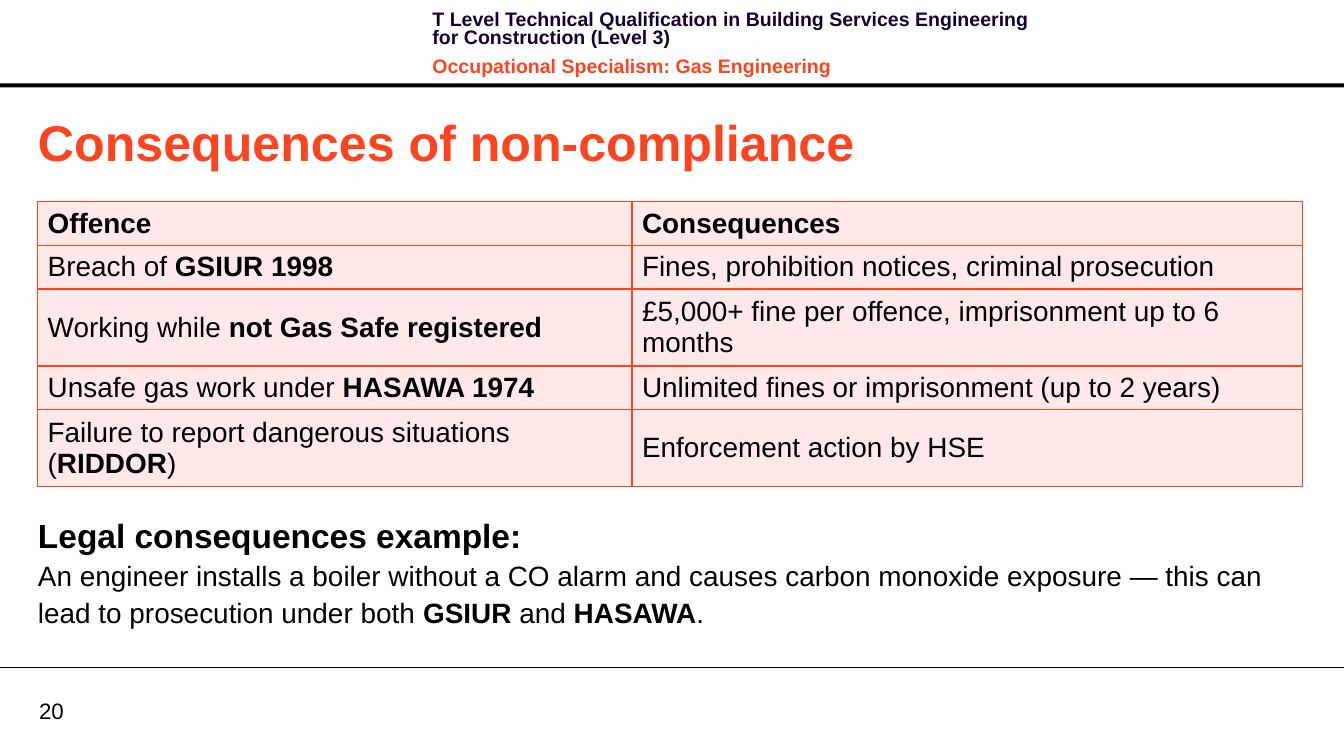
from dataclasses import dataclass

from pptx import Presentation
from pptx.dml.color import RGBColor
from pptx.enum.shapes import MSO_CONNECTOR, MSO_SHAPE
from pptx.enum.text import MSO_ANCHOR as ANCHOR
from pptx.oxml import parse_xml
from pptx.oxml.ns import nsdecls, qn
from pptx.util import Inches, Pt


@dataclass(frozen=True)
class Theme:
    """Colours, font and type sizes of the deck."""
    font: str = "Arial"
    ink: str = "000000"
    navy: str = "170130"
    accent: str = "FC4421"
    tint: str = "FEE9E8"
    title: int = 36
    lead: int = 24
    body: int = 20
    number: int = 16
    header: int = 14


@dataclass(frozen=True)
class Box:
    """A rectangle in inches."""
    x: float
    y: float
    w: float
    h: float

    def inner(self, x, y, w, h):
        """Return the inner box given in percent of this one."""
        return Box(self.x + self.w * x / 100, self.y + self.h * y / 100,
                   self.w * w / 100, self.h * h / 100)

    def emu(self):
        """Return left, top, width and height as lengths."""
        return [Inches(v) for v in (self.x, self.y, self.w, self.h)]


T = Theme()
PAGE = Box(0, 0, 13.39, 7.48)
ROWS = [
    (1, "**Offence**", "**Consequences**"),
    (1, "Breach of **GSIUR 1998**",
     "Fines, prohibition notices, criminal prosecution"),
    (2, "Working while **not Gas Safe registered**",
     "£5,000+ fine per offence, imprisonment up to 6 months"),
    (1, "Unsafe gas work under **HASAWA 1974**",
     "Unlimited fines or imprisonment (up to 2 years)"),
    (2, "Failure to report dangerous situations (**RIDDOR**)",
     "Enforcement action by HSE"),
]


def write(p, text, size=T.body, color=T.ink, spacing=None, before=0, after=0):
    """Add text to a paragraph, with **marked** parts in bold."""
    p.space_before, p.space_after = Pt(before), Pt(after)
    if spacing:
        p.line_spacing = spacing
    for i, piece in enumerate(text.split("**")):
        if piece:
            r = p.add_run()
            r.text = piece
            r.font.name, r.font.size, r.font.bold = T.font, Pt(size), i % 2 == 1
            r.font.color.rgb = RGBColor.from_string(color)


def text_frame(s, box, anchor=ANCHOR.MIDDLE, inset=True):
    """Add a wrapping text box and return its frame."""
    tf = s.shapes.add_textbox(*box.emu()).text_frame
    tf.word_wrap, tf.vertical_anchor = True, anchor
    if not inset:
        tf.margin_left = tf.margin_right = tf.margin_top = tf.margin_bottom = 0
    return tf


def border(cell):
    """Draw an accent line on the four sides of a cell."""
    tc_pr = cell._tc.get_or_add_tcPr()
    for i, side in enumerate(("lnL", "lnR", "lnT", "lnB")):
        tc_pr.insert(i, parse_xml(
            f'<a:{side} {nsdecls("a")} w="{Pt(1)}"><a:solidFill>'
            f'<a:srgbClr val="{T.accent}"/></a:solidFill></a:{side}>'))


def header(s, box):
    """Place the course name over a thick rule."""
    sp = s.shapes.add_shape(MSO_SHAPE.RECTANGLE, *box.inner(0, 95.4, 100, 4.6).emu())
    sp.shadow.inherit = False
    sp.fill.solid()
    sp.fill.fore_color.rgb = RGBColor.from_string(T.ink)
    sp.line.fill.background()
    tf = text_frame(s, box.inner(31.44, 8.05, 47.57, 73.56), ANCHOR.TOP)
    write(tf.paragraphs[0], "**T Level Technical Qualification in Building Services "
          "Engineering for Construction (Level 3)**",
          size=T.header, color=T.navy, spacing=Pt(13.1), after=4)
    write(tf.add_paragraph(), "**Occupational Specialism: Gas Engineering**",
          size=T.header, color=T.accent, spacing=Pt(13.1), before=4, after=4)


def offence_table(s, box, line=0.31, padding=0.1):
    """Place the table, each row as high as its lines of text."""
    heights = [Inches(lines * line + padding) for lines, *_ in ROWS]
    x, y, w, _ = box.emu()
    table = s.shapes.add_table(len(ROWS), 2, x, y, w, sum(heights)).table
    table.first_row = table.horz_banding = False
    for col, share in zip(table.columns, (0.47, 0.53)):
        col.width = int(w * share)
    for row, height, (_, *texts) in zip(table.rows, heights, ROWS):
        row.height = height
        for cell, text in zip(row.cells, texts):
            cell.vertical_anchor = ANCHOR.MIDDLE
            cell.fill.solid()
            cell.fill.fore_color.rgb = RGBColor.from_string(T.tint)
            border(cell)
            write(cell.text_frame.paragraphs[0], text)


def content(s, box):
    """Place the title, the table and the example."""
    tf = text_frame(s, box.inner(2.09, 3.11, 95, 12.28))
    write(tf.paragraphs[0], "**Consequences of non-compliance**",
          size=T.title, color=T.accent)
    offence_table(s, box.inner(2.8, 19.72, 94.1, 46.2))
    p = text_frame(s, box.inner(2.09, 73.01, 94.85, 20.42)).paragraphs[0]
    write(p, "**Legal consequences example:**", size=T.lead, spacing=1.09)
    p.add_line_break()
    write(p, "An engineer installs a boiler without a CO alarm and causes carbon "
          "monoxide exposure — this can lead to prosecution under both "
          "**GSIUR** and **HASAWA**.", spacing=1.09)


def footer(s, box):
    """Place the thin rule and the page number."""
    x, y, w, _ = box.emu()
    rule = s.shapes.add_connector(MSO_CONNECTOR.STRAIGHT, x, y, x + w, y)
    rule.line.width = Pt(0.75)
    rule.line.color.rgb = RGBColor.from_string(T.ink)
    sp_pr = rule._element.spPr
    sp_pr.append(sp_pr.makeelement(qn("a:effectLst"), {}))
    tf = text_frame(s, box.inner(2.91, 34.94, 4.78, 32.53), inset=False)
    write(tf.paragraphs[0], "20", size=T.number)


def main():
    """Build the slide and save it."""
    prs = Presentation()
    prs.slide_width, prs.slide_height = Inches(PAGE.w), Inches(PAGE.h)
    s = prs.slides.add_slide(prs.slide_layouts[6])
    header(s, PAGE.inner(0, 0, 100, 11.63))
    content(s, PAGE.inner(0, 11.63, 100, 77.27))
    footer(s, PAGE.inner(0, 88.9, 100, 11.1))
    prs.save("out.pptx")


if __name__ == "__main__":
    main()
